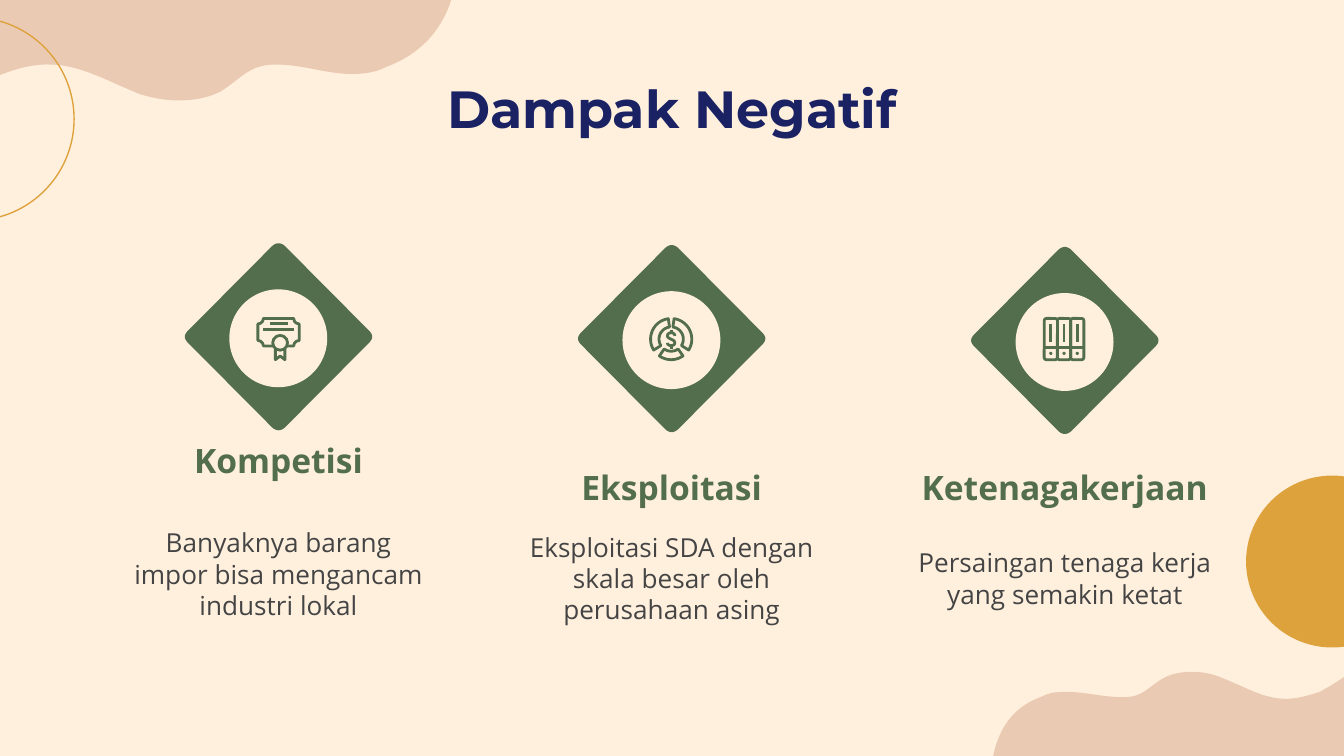
from math import cos, radians, sin

from lxml.etree import SubElement
from pptx import Presentation
from pptx.dml.color import RGBColor
from pptx.enum.shapes import MSO_CONNECTOR as Link, MSO_SHAPE as Form
from pptx.enum.text import MSO_ANCHOR as Anchor, MSO_AUTO_SIZE as Auto, PP_ALIGN as Align
from pptx.oxml.ns import qn
from pptx.util import Cm, Pt

INK = {"cream": "FFF0DE", "blush": "EBCAB3", "gold": "DEA23C",
       "green": "536E4C", "navy": "1A2263", "gray": "444444"}
PEN = 1.5  # icon stroke, points

# Outlines in cm: two numbers draw a line, six a Bezier curve
TOP = [(3.38, 1.9), (3.66, 1.9, 3.94, 1.85, 4.17, 1.73),
       (4.55, 1.5, 4.7, 1.22, 5.21, 1.22), (5.72, 1.22, 6.17, 1.4, 6.65, 1.4),
       (6.86, 1.4, 7.11, 1.37, 7.29, 1.27), (7.92, 1.04, 8.33, 0.61, 8.53, 0),
       (0, 0), (0, 1.42), (0.38, 1.27, 0.66, 1.22, 0.91, 1.22),
       (1.5, 1.22, 1.96, 1.5, 2.64, 1.78), (2.87, 1.85, 3.12, 1.9, 3.38, 1.9)]
BASE = [(6.63, 1.59), (6.63, 0.1), (6.48, 0.2, 6.32, 0.3, 6.17, 0.38),
        (5.92, 0.46, 5.72, 0.51, 5.54, 0.51), (5.11, 0.51, 4.8, 0.3, 4.29, 0.1),
        (4.11, 0.03, 3.94, 0, 3.76, 0), (3.56, 0, 3.38, 0.03, 3.2, 0.13),
        (2.92, 0.3, 2.82, 0.48, 2.46, 0.48), (2.08, 0.48, 1.75, 0.38, 1.4, 0.38),
        (1.24, 0.38, 1.09, 0.38, 0.94, 0.46), (0.43, 0.64, 0.13, 0.99, 0, 1.59)]
GEM = [(1.67, 0.05), (0.08, 1.65), (0, 1.73, 0, 1.8, 0.08, 1.88),
       (1.67, 3.48), (1.75, 3.55, 1.83, 3.55, 1.91, 3.48),
       (3.5, 1.88), (3.58, 1.8, 3.58, 1.73, 3.5, 1.65),
       (1.91, 0.05), (1.83, -0.02, 1.75, -0.02, 1.67, 0.05)]
SIGN = [(0.48, 0.36), (0.48, 0.28, 0.34, 0.28, 0.34, 0.36),
        (0.34, 0.42, 0.48, 0.42, 0.48, 0.49), (0.48, 0.56, 0.34, 0.56, 0.34, 0.49)]


def rgb(name):
    return RGBColor.from_string(INK[name])


def paint(shape, fill=None, line=None, width=PEN):
    shape.shadow.inherit = False
    if fill:
        shape.fill.solid()
        shape.fill.fore_color.rgb = rgb(fill)
    else:
        shape.fill.background()
    if line:
        shape.line.color.rgb = rgb(line)
        shape.line.width = Pt(width)
    else:
        shape.line.fill.background()


def trace(shapes, x, y, steps, closed=True, **look):
    """Draw an outline whose steps are measured from x, y."""
    dots = [steps[0]]
    for step in steps[1:]:
        if len(step) == 2:
            dots.append(step)
            continue
        knots = [dots[-1], step[:2], step[2:4], step[4:]]
        for n in range(1, 17):
            t = n / 16
            mix = ((1 - t) ** 3, 3 * t * (1 - t) ** 2, 3 * t * t * (1 - t), t ** 3)
            dots.append(tuple(sum(m * k[a] for m, k in zip(mix, knots)) for a in (0, 1)))
    dots = [(Cm(a), Cm(b)) for a, b in dots]
    pen = shapes.build_freeform(*dots[0])
    pen.add_line_segments(dots[1:], close=closed)
    paint(pen.convert_to_shape(Cm(x), Cm(y)), **look)


def place(shapes, form, x, y, w, h, **look):
    shape = shapes.add_shape(form, Cm(x), Cm(y), Cm(w), Cm(h))
    paint(shape, **look)
    return shape


def rule(shapes, x1, y1, x2, y2):
    line = shapes.add_connector(Link.STRAIGHT, Cm(x1), Cm(y1), Cm(x2), Cm(y2))
    line.line.color.rgb = rgb("green")
    line.line.width = Pt(PEN)
    SubElement(line._element.spPr, qn("a:effectLst"))


def write(shape, box, text, size, font, color, bold):
    shape.left, shape.top, shape.width, shape.height = map(Cm, box)
    frame = shape.text_frame
    frame.text = text
    frame.word_wrap = True
    frame.auto_size = Auto.NONE
    frame.vertical_anchor = Anchor.MIDDLE
    frame.margin_left = frame.margin_right = Cm(0.25)
    frame.margin_top = frame.margin_bottom = Cm(0.25)
    para = frame.paragraphs[0]
    para.alignment = Align.CENTER
    para.space_before = Pt(0)
    para.font.name, para.font.size, para.font.bold = font, Pt(size), bold
    para.font.color.rgb = rgb(color)
    props = para._p.get_or_add_pPr()
    props.set("marL", "0")
    props.set("indent", "0")
    mark = props.makeelement(qn("a:buNone"), {})
    props.find(qn("a:defRPr")).addprevious(mark)


# Icons, each in a box 0.84 cm wide and high
def award(shapes, x, y):
    frame = place(shapes, Form.PLAQUE, x + 0.03, y + 0.03, 0.78, 0.52, line="green")
    frame.adjustments[0] = 0.2
    rule(shapes, x + 0.25, y + 0.13, x + 0.6, y + 0.13)
    rule(shapes, x + 0.13, y + 0.24, x + 0.72, y + 0.24)
    tails = [(0.36, 0.57), (0.36, 0.81), (0.45, 0.74), (0.54, 0.81), (0.54, 0.57)]
    trace(shapes, x, y, tails, closed=False, fill="cream", line="green")
    place(shapes, Form.OVAL, x + 0.31, y + 0.35, 0.28, 0.28, fill="cream", line="green")


def ring(shapes, x, y):
    for start, end in ((55, 125), (148, 262), (-82, 32)):
        turn = [radians(start + (end - start) * n / 16) for n in range(17)]
        arc = [(0.41 + r * cos(a), 0.42 + r * sin(a))
               for r, way in ((0.39, turn), (0.23, turn[::-1])) for a in way]
        trace(shapes, x, y, arc, line="green")
    trace(shapes, x, y, SIGN, closed=False, line="green")
    for top in (0.24, 0.55):
        rule(shapes, x + 0.41, y + top, x + 0.41, y + top + 0.05)


def files(shapes, x, y):
    for n in range(3):
        left = x + 0.03 + 0.25 * n
        mid = left + 0.125
        place(shapes, Form.ROUNDED_RECTANGLE, left, y + 0.03, 0.25, 0.78, line="green")
        rule(shapes, left, y + 0.58, left + 0.25, y + 0.58)
        rule(shapes, mid, y + 0.13, mid, y + 0.48)
        place(shapes, Form.OVAL, mid - 0.03, y + 0.66, 0.06, 0.06, fill="green")


def decor(shapes, wide, high):
    trace(shapes, wide - 6.63, high - 1.59, BASE, fill="blush")
    place(shapes, Form.OVAL, wide - 1.85, 8.99, 3.25, 3.25, fill="gold")
    trace(shapes, 0, 0, TOP, fill="blush")
    place(shapes, Form.OVAL, -2.44, 0.33, 3.84, 3.84, line="gold", width=0.75)


def card(shapes, body, x, y, wide, low, item):
    """One column: gem with icon, heading at low[0], text at low[1]."""
    name, text, icon = item
    left = x + (wide - 3.58) / 2
    trace(shapes, left, y, GEM, fill="green")
    place(shapes, Form.OVAL, left + 0.86, y + 0.87, 1.85, 1.85, fill="cream")
    icon(shapes.add_group_shape().shapes, left + 1.37, 5.99)
    head = shapes.add_textbox(0, 0, 0, 0)
    write(head, (x, low[0], wide, 1.09), name, 18, "Open Sans", "green", True)
    write(body, (x, low[1], wide, 11.94 - low[1]), text, 14, "Open Sans", "gray", False)


def main():
    deck = Presentation()
    wide, high = 25.4, 14.29
    deck.slide_width, deck.slide_height = Cm(wide), Cm(high)
    slide = deck.slides.add_slide(deck.slide_layouts[4])
    slide.background.fill.solid()
    slide.background.fill.fore_color.rgb = rgb("cream")
    shapes = slide.shapes
    decor(shapes, wide, high)

    # Title
    write(shapes.title, (1.98, 1.24, 21.44, 1.6), "Dampak Negatif",
          28, "Montserrat", "navy", True)

    # Three columns
    items = [("Kompetisi", "Banyaknya barang impor bisa mengancam industri lokal", award),
             ("Eksploitasi", "Eksploitasi SDA dengan skala besar oleh perusahaan asing", ring),
             ("Ketenagakerjaan", "Persaingan tenaga kerja yang semakin ketat", files)]
    lows = [(8.15, 9.75), (8.66, 9.91), (8.66, 9.91)]
    holds = [p for p in slide.placeholders if 1 <= p.placeholder_format.idx <= 4]
    for n, (item, low) in enumerate(zip(items, lows)):
        card(shapes, holds[n], 2.13 + 7.43 * n, 4.6 + 0.035 * n, 6.27, low, item)

    # Spare placeholders
    for spare in list(slide.placeholders):
        if not spare.text_frame.text:
            spare._element.getparent().remove(spare._element)
    deck.save("out.pptx")


if __name__ == "__main__":
    main()
